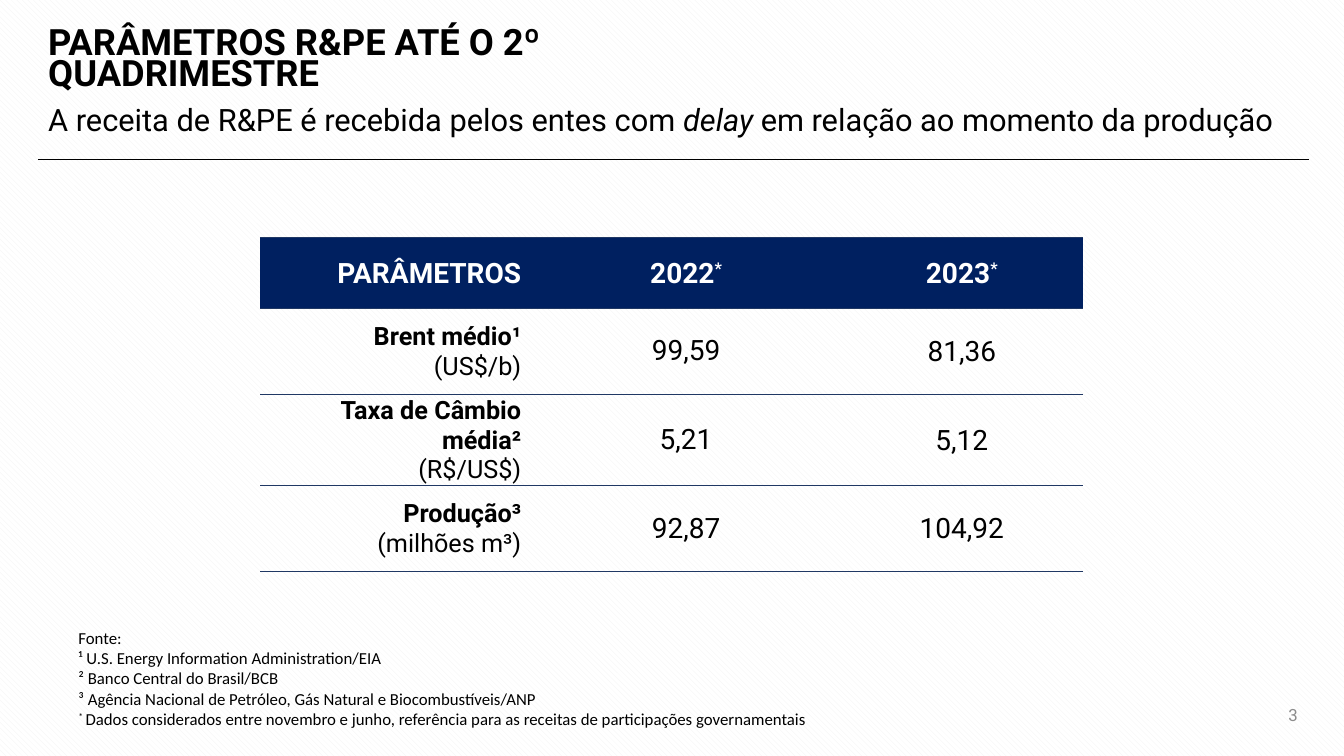
import pptx
import pptx.util
import pptx.dml.color
import pptx.enum.dml
import pptx.enum.shapes
import pptx.enum.text
import pptx.oxml
import pptx.oxml.ns
from pptx.util import Inches

hues = {"ink": "000000", "navy": "002060", "rule": "203864", "white": "FFFFFF",
        "hatch": "F2F2F2", "gray": "8C8C8C"}
ALIGN = pptx.enum.text.PP_ALIGN
MIDDLE = pptx.enum.text.MSO_ANCHOR.MIDDLE


def tint(name):
    return pptx.dml.color.RGBColor.from_string(hues[name])


def write(frame, lines, size, hue="ink", face="Roboto", align=ALIGN.LEFT, space=None):
    frame.word_wrap = True
    for row, parts in enumerate(lines):
        para = frame.add_paragraph() if row else frame.paragraphs[0]
        para.alignment = align
        para.line_spacing = space
        for text, style in parts:
            run = para.add_run()
            run.text = text
            run.font.size = pptx.util.Pt(size)
            run.font.name = face
            run.font.color.rgb = tint(hue)
            run.font.bold = "b" in style
            run.font.italic = "i" in style
            if "^" in style:
                run.font._element.set("baseline", "30000")


deck = pptx.Presentation()
deck.slide_width, deck.slide_height = Inches(13.33), Inches(7.5)
slide = deck.slides.add_slide(deck.slide_layouts[6])
back = slide.background.fill
back.patterned()
back.pattern = pptx.enum.dml.MSO_PATTERN.WIDE_DOWNWARD_DIAGONAL
back.fore_color.rgb = tint("hatch")
back.back_color.rgb = tint("white")

title = slide.shapes.add_textbox(Inches(0.38), Inches(0.22), Inches(7.85), Inches(0.79))
title.text_frame.vertical_anchor = MIDDLE
write(title.text_frame, [[("PARÂMETROS R&PE ATÉ O 2º QUADRIMESTRE", "b")]], 25.9, space=0.7)

lead = slide.shapes.add_textbox(Inches(0.38), Inches(0.85), Inches(12.6), Inches(0.59))
lead.text_frame.vertical_anchor = MIDDLE
write(lead.text_frame, [[("A receita de R&PE é recebida pelos entes com ", ""),
                         ("delay ", "i"),
                         ("em relação ao momento da produção", "")]], 22, space=1.2)

rule = slide.shapes.add_connector(pptx.enum.shapes.MSO_CONNECTOR.STRAIGHT,
                                  Inches(0.38), Inches(1.58), Inches(12.98), Inches(1.58))
rule.line.color.rgb = tint("ink")
rule.line.width = pptx.util.Pt(0.5)
rule._element.spPr.append(pptx.oxml.parse_xml(
    f'<a:effectLst {pptx.oxml.ns.nsdecls("a")}/>'))

widths = [2.6, 0.59, 2.07, 0.5, 2.4]
heights = [0.7, 0.85, 0.85, 0.85]
rows = [
    ([[("PARÂMETROS", "b")]], [("2022", "b"), ("*", "b^")], [("2023", "b"), ("*", "b^")]),
    ([[("Brent médio¹", "b")], [("(US$/b)", "")]], [("99,59", "")], [("81,36", "")]),
    ([[("Taxa de Câmbio média²", "b")], [("(R$/US$)", "")]], [("5,21", "")], [("5,12", "")]),
    ([[("Produção³", "b")], [("(milhões m³)", "")]], [("92,87", "")], [("104,92", "")]),
]
table = slide.shapes.add_table(len(rows), len(widths), Inches(2.58), Inches(2.36),
                               Inches(sum(widths)), Inches(sum(heights))).table
table.first_row = table.horz_banding = False
table._tbl.tblPr[0].text = "{2D5ABB26-0587-4C30-8999-92F81FD0307C}"
for col, width in zip(table.columns, widths):
    col.width = Inches(width)
for row, (label, old, new) in enumerate(rows):
    table.rows[row].height = Inches(heights[row])
    for cell in table.rows[row].cells:
        cell.vertical_anchor = MIDDLE
        cell.margin_left = cell.margin_top = cell.margin_right = Inches(0.01)
        cell.margin_bottom = 0
        if row == 0:
            cell.fill.solid()
            cell.fill.fore_color.rgb = tint("navy")
        else:
            cell.fill.background()
        props = cell._tc.get_or_add_tcPr()
        for spot, edge in enumerate(["lnT", "lnB"]):
            props.insert(spot, pptx.oxml.parse_xml(
                f'<a:{edge} {pptx.oxml.ns.nsdecls("a")} w="12700"><a:solidFill>'
                f'<a:srgbClr val="{hues["rule"]}"/></a:solidFill></a:{edge}>'))
    hue = "ink" if row else "white"
    write(table.cell(row, 0).text_frame, label, 18 if row else 20, hue, align=ALIGN.RIGHT)
    for col, value in [(2, old), (4, new)]:
        write(table.cell(row, col).text_frame, [value], 20, hue, align=ALIGN.CENTER)
    if row:
        cell = table.cell(row, 2)
        cell.margin_left = cell.margin_right = Inches(0.15)
        cell.margin_top = cell.margin_bottom = Inches(0.08)

notes = slide.shapes.add_textbox(Inches(0.68), Inches(6.18), Inches(11.6), Inches(1.14))
write(notes.text_frame, [
    [("Fonte:", "")],
    [("¹ U.S. Energy Information Administration/EIA", "")],
    [("² Banco Central do Brasil/BCB", "")],
    [("³ Agência Nacional de Petróleo, Gás Natural e Biocombustíveis/ANP", "")],
    [("* ", "^"), ("Dados considerados entre novembro e junho, referência para as receitas "
                   "de participações governamentais", "")],
], 12, face="Calibri")

page = slide.shapes.add_textbox(Inches(12.01), Inches(6.89), Inches(0.96), Inches(0.4))
page.text_frame.vertical_anchor = MIDDLE
write(page.text_frame, [[("3", "")]], 12, "gray", align=ALIGN.RIGHT)

deck.save("out.pptx")
